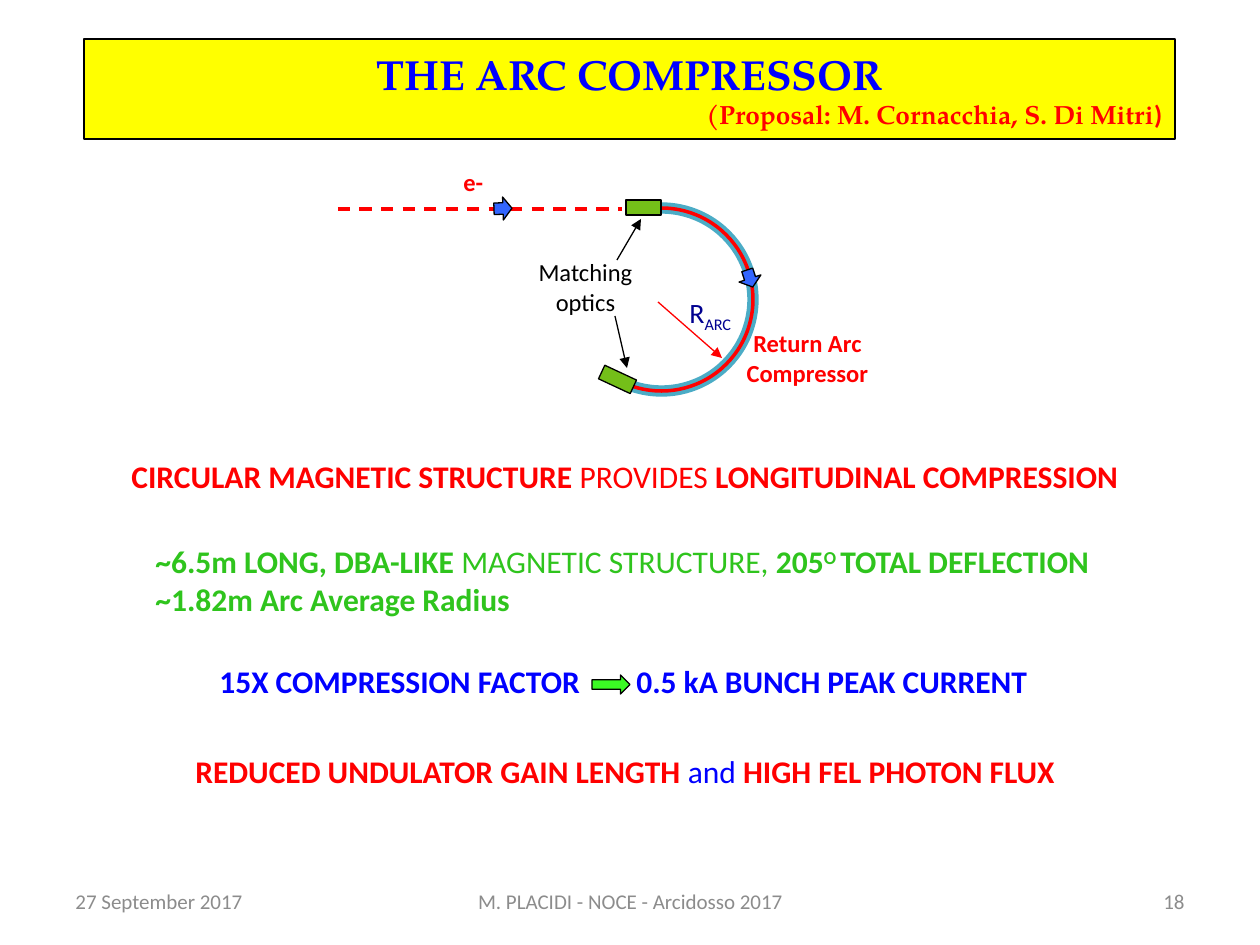
from pptx import Presentation
from pptx.dml.color import RGBColor
from pptx.enum.dml import MSO_LINE
from pptx.enum.shapes import MSO_CONNECTOR, MSO_SHAPE
from pptx.enum.text import MSO_ANCHOR, MSO_AUTO_SIZE, PP_ALIGN
from pptx.oxml.ns import qn
from pptx.util import Emu, Pt
from lxml import etree

LEFT, CENTER, RIGHT = PP_ALIGN.LEFT, PP_ALIGN.CENTER, PP_ALIGN.RIGHT
TOP, MIDDLE = MSO_ANCHOR.TOP, MSO_ANCHOR.MIDDLE
ARC, ARROW, RECT = MSO_SHAPE.ARC, MSO_SHAPE.RIGHT_ARROW, MSO_SHAPE.RECTANGLE

BLACK = RGBColor(0x00, 0x00, 0x00)
RED = RGBColor(0xFF, 0x00, 0x00)
BLUE = RGBColor(0x00, 0x00, 0xFF)
NAVY = RGBColor(0x00, 0x00, 0x90)
YELLOW = RGBColor(0xFF, 0xFF, 0x00)
GRAY = RGBColor(0x8C, 0x8C, 0x8C)
GREEN = RGBColor(0x2F, 0xC4, 0x1D)
BRIGHT_GREEN = RGBColor(0x3B, 0xFA, 0x24)
MAGNET_GREEN = RGBColor(0x74, 0xBF, 0x19)
BEAM_BLUE = RGBColor(0x33, 0x66, 0xFF)
ARC_BLUE = RGBColor(0x4B, 0xAC, 0xC6)

BODY_FONT, TITLE_FONT = "Calibri", "TeX Gyre Pagella"
BOLD = {"bold": True}
PLAIN = {"bold": False}


def px(value):
    return Emu(round(value * 914400 / 126))


def place(shape, left, top, width, height):
    for name, value in zip(("left", "top", "width", "height"), (left, top, width, height)):
        setattr(shape, name, px(value))


def write(frame, lines, size, color, align=LEFT):
    """Each line is a list of (text, format) spans; baseline is in thousandths of a percent."""
    for index, spans in enumerate(lines):
        para = frame.paragraphs[0] if index == 0 else frame.add_paragraph()
        para.alignment = align
        for text, style in spans:
            span = para.add_run()
            span.text = text
            values = {"name": BODY_FONT, "size": Pt(size), "color": color, **style}
            baseline = values.pop("baseline", None)
            span.font.color.rgb = values.pop("color")
            for name, value in values.items():
                setattr(span.font, name, value)
            if baseline:
                span.font._element.set("baseline", str(baseline))


def add_text(page, box, lines, size, color, align=LEFT, anchor=TOP, wrap=False):
    frame = page.shapes.add_textbox(*map(px, box)).text_frame
    frame.word_wrap = wrap
    frame.vertical_anchor = anchor
    write(frame, lines, size, color, align)


def add_figure(page, kind, box, fill=None, line=BLACK, weight=0.75, rotation=0):
    figure = page.shapes.add_shape(kind, *map(px, box))
    figure.shadow.inherit = False
    figure.rotation = rotation
    if fill is None:
        figure.fill.background()
    else:
        figure.fill.solid()
        figure.fill.fore_color.rgb = fill
    figure.line.color.rgb = line
    figure.line.width = Pt(weight)
    return figure


def add_line(page, start, end, color, weight=0.75, head=True):
    line = page.shapes.add_connector(MSO_CONNECTOR.STRAIGHT, *map(px, start + end))
    line.line.color.rgb = color
    line.line.width = Pt(weight)
    if head:
        etree.SubElement(line.line._get_or_add_ln(), qn("a:tailEnd"), type="triangle")
    etree.SubElement(line._element.spPr, qn("a:effectLst"))
    return line


def add_title(page, box):
    title = page.shapes.title
    place(title, *box)
    title.fill.solid()
    title.fill.fore_color.rgb = YELLOW
    title.line.color.rgb = BLACK
    title.line.width = Pt(0.75)
    frame = title.text_frame
    frame.auto_size = MSO_AUTO_SIZE.NONE
    frame.vertical_anchor = MIDDLE
    serif = {"name": TITLE_FONT, "bold": True}
    credit = {"size": Pt(15), "color": RED, "bold": True}
    write(frame, [
        [("THE ARC COMPRESSOR", serif)],
        [("(Proposal: M. Cornacchia, S. Di Mitri", {**serif, **credit}), (")", credit)],
    ], 24, BLUE, CENTER)
    frame.paragraphs[1].alignment = RIGHT


def add_beamline(page, left, top):
    def at(x, y, *size):
        return (left + x, top + y, *size)

    def label(box, lines, color, style, size=14, align=CENTER):
        add_text(page, box, [[(text, style)] for text in lines], size, color, align)

    def add_arc(color, weight):
        arc = add_figure(page, ARC, at(232, 47, 183, 183), line=color, weight=weight)
        # python-pptx divides the angle units (1/60000 degree) by 100000
        arc.adjustments[0], arc.adjustments[1] = 270 * 0.6, 109 * 0.6

    add_arc(ARC_BLUE, 6.5)
    beam = add_line(page, at(0, 48), at(284, 48), RED, 1.75, head=False)
    beam.line.dash_style = MSO_LINE.DASH
    label(at(395, 161, 149, 72), ["Return Arc", "Compressor"], RED, BOLD)
    label(at(113, 0, 45, 43), ["e-"], RED, BOLD, align=LEFT)
    add_arc(RED, 2)
    for x, y, rotation in ((403, 106, 72), (156, 36, 358)):
        add_figure(page, ARROW, at(x, y, 18, 23), BEAM_BLUE, rotation=rotation)
    for x, y, rotation in ((262, 211, 25), (288, 39, 0)):
        add_figure(page, RECT, at(x, y, 35, 15), MAGNET_GREEN, rotation=rotation)
    for start, end, color in (
        ((277, 155), (289, 207), BLACK),
        ((279, 99), (303, 58), BLACK),
        ((320, 141), (384, 197), RED),
    ):
        add_line(page, at(*start), at(*end), color)
    label(at(187, 90, 121, 72), ["Matching", "optics"], BLACK, PLAIN)
    add_text(page, at(339, 128, 73, 47), [[("R", {}), ("ARC", {"baseline": -25000})]], 16, NAVY)


def add_statements(page, left, top):
    statements = (
        ((0, 0, 1026, 50), RED, [[
            ("CIRCULAR MAGNETIC STRUCTURE ", BOLD), ("PROVIDES ", PLAIN),
            ("LONGITUDINAL COMPRESSION", BOLD)]]),
        ((24, 85, 977, 89), GREEN, [
            [("~6.5m LONG, DBA-LIKE ", BOLD), ("MAGNETIC STRUCTURE, ", PLAIN), ("205", BOLD),
             ("O ", {"bold": True, "baseline": 30000}), ("TOTAL DEFLECTION", BOLD)],
            [("~1.82m Arc Average Radius", BOLD)]]),
        ((88, 205, 410, 50), BLUE, [[("15X COMPRESSION FACTOR", BOLD)]]),
        ((505, 205, 440, 50), BLUE, [[("0.5 kA BUNCH PEAK CURRENT", BOLD)]]),
        ((64, 295, 920, 50), RED, [[
            ("REDUCED UNDULATOR GAIN LENGTH ", BOLD), ("and ", {"color": BLUE}),
            ("HIGH FEL PHOTON FLUX", BOLD)]]),
    )
    for (x, y, width, height), color, lines in statements:
        add_text(page, (left + x, top + y, width, height), lines, 18, color)
    add_figure(page, ARROW, (left + 473, top + 224, 38, 19), BRIGHT_GREEN)


def add_footer(page, top, height):
    for left, width, text, align in (
        (63, 294, "27 September 2017", LEFT),
        (431, 399, "M. PLACIDI - NOCE - Arcidosso 2017", CENTER),
        (903, 294, "18", RIGHT),
    ):
        add_text(page, (left, top, width, height), [[(text, {})]], 12, GRAY, align, MIDDLE, True)


def main():
    deck = Presentation()
    deck.slide_width, deck.slide_height = px(1260), px(945)
    page = deck.slides.add_slide(deck.slide_layouts.get_by_name("Title Only"))
    add_title(page, (84, 39, 1091, 100))
    add_footer(page, 876, 50)
    add_beamline(page, 338, 161)
    add_statements(page, 119, 451)
    deck.save("out.pptx")


if __name__ == "__main__":
    main()
